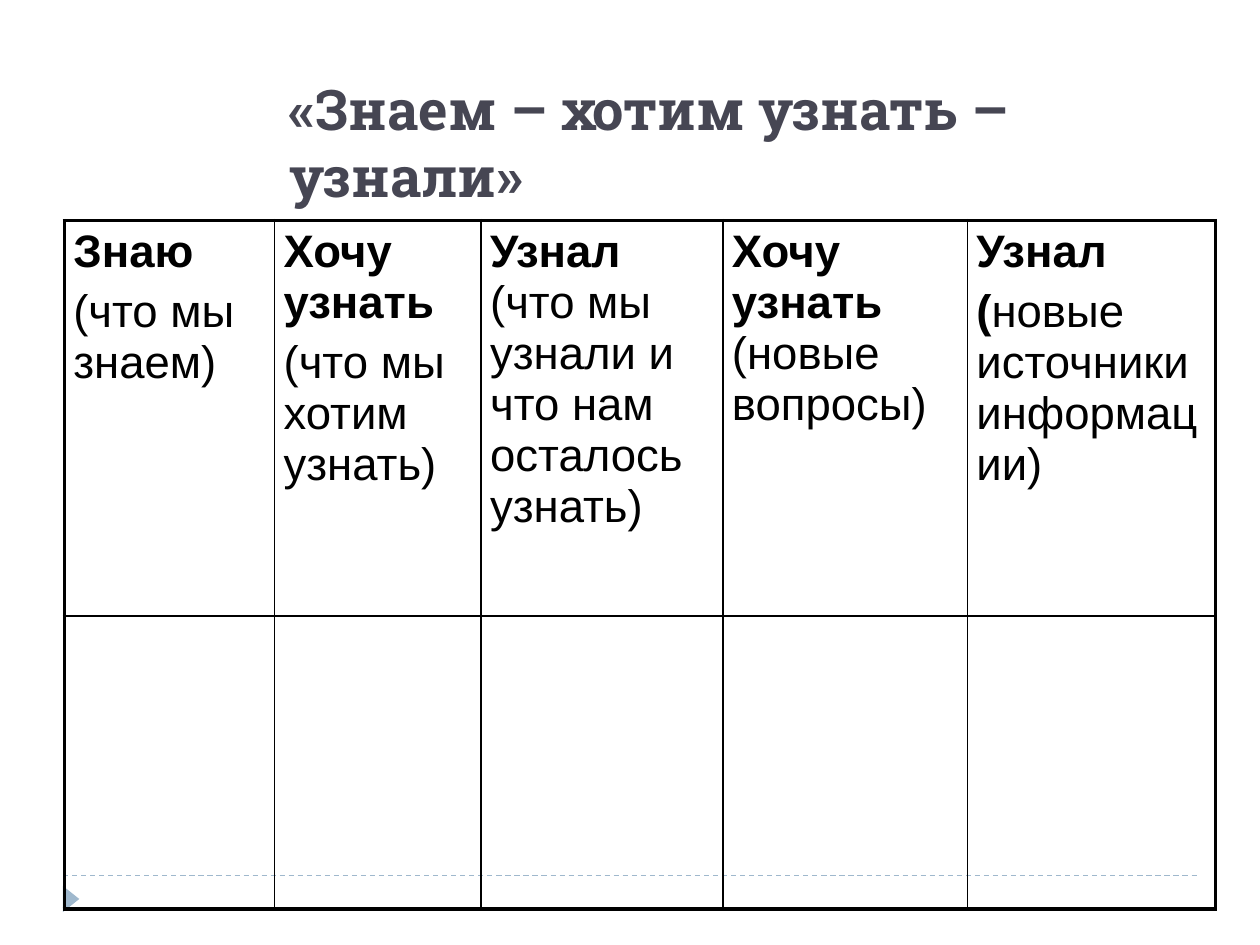
from lxml import etree
from pptx import Presentation
from pptx.dml.color import RGBColor
from pptx.enum.dml import MSO_LINE
from pptx.enum.shapes import MSO_CONNECTOR, MSO_SHAPE
from pptx.enum.text import MSO_ANCHOR
from pptx.oxml.ns import qn
from pptx.util import Pt

STRAIGHT = MSO_CONNECTOR.STRAIGHT
TRIANGLE = MSO_SHAPE.ISOSCELES_TRIANGLE
DASH = MSO_LINE.DASH
MIDDLE = MSO_ANCHOR.MIDDLE

BLACK = RGBColor(0x00, 0x00, 0x00)
SLATE = RGBColor(0x46, 0x46, 0x53)
PALE_BLUE = RGBColor(0x9F, 0xB8, 0xCD)

OUTER, INNER = 2.25, 1

# One entry per column: paragraphs, each a list of (text, bold) runs.
HEADINGS = [
    [[("Знаю", True)], [("(что мы знаем)", False)]],
    [[("Хочу узнать", True)], [("(что мы хотим узнать)", False)]],
    [[("Узнал ", True), ("(что мы узнали и что нам осталось узнать)", False)]],
    [[("Хочу узнать", True), (" (новые вопросы)", False)]],
    [[("Узнал", True)], [("(", True), ("новые источники информации)", False)]],
]
COLUMN_WIDTHS = [120.2, 118, 138.2, 139.7, 141.8]
ROW_HEIGHTS = [226, 167.5]


def write(frame, paragraphs, *, font, size, color, space_before=0):
    """Fill a text frame with paragraphs, each a list of (text, bold) runs."""
    frame.word_wrap = True
    for index, runs in enumerate(paragraphs):
        paragraph = frame.paragraphs[0] if index == 0 else frame.add_paragraph()
        paragraph.space_before = Pt(space_before)
        for text, bold in runs:
            run = paragraph.add_run()
            run.text = text
            run.font.name = font
            run.font.size = Pt(size)
            run.font.bold = bold
            run.font.color.rgb = color


def set_borders(cell, widths):
    """Draw the cell's edges; widths maps L, R, T, B, in that order, to points."""
    properties = cell._tc.get_or_add_tcPr()
    for side, width in widths.items():
        edge = etree.SubElement(properties, qn(f"a:ln{side}"), w=str(Pt(width)))
        fill = etree.SubElement(edge, qn("a:solidFill"))
        etree.SubElement(fill, qn("a:srgbClr"), val=str(BLACK))


presentation = Presentation()
presentation.slide_width, presentation.slide_height = Pt(720), Pt(540)
slide = presentation.slides.add_slide(presentation.slide_layouts[6])
shapes = slide.shapes

# Footer rule and marker
footer_rule = shapes.add_connector(STRAIGHT, Pt(36), Pt(500.4), Pt(684), Pt(500.4))
footer_rule.line.color.rgb = PALE_BLUE
footer_rule.line.width = Pt(0.75)
footer_rule.line.dash_style = DASH
etree.SubElement(footer_rule._element.spPr, qn("a:effectLst"))

marker = shapes.add_shape(TRIANGLE, Pt(33.1), Pt(509), Pt(15), Pt(9.4))
marker.rotation = 90
marker.shadow.inherit = False
marker.fill.solid()
marker.fill.fore_color.rgb = PALE_BLUE
marker.line.fill.background()

# Title
title = shapes.add_textbox(Pt(158.4), Pt(28.8), Pt(561.6), Pt(104.4)).text_frame
title.vertical_anchor = MIDDLE
write(title, [[("«Знаем – хотим узнать – узнали»", True)]],
      font="Roboto Slab", size=32, color=SLATE)

# Table: headings above an empty row to fill in
last_row, last_column = len(ROW_HEIGHTS) - 1, len(COLUMN_WIDTHS) - 1
table = shapes.add_table(len(ROW_HEIGHTS), len(COLUMN_WIDTHS), Pt(36.7), Pt(126),
                         Pt(sum(COLUMN_WIDTHS)), Pt(sum(ROW_HEIGHTS))).table
table.first_row = table.horz_banding = False
for column, width in zip(table.columns, COLUMN_WIDTHS):
    column.width = Pt(width)
for r, height in enumerate(ROW_HEIGHTS):
    table.rows[r].height = Pt(height)
    for c in range(len(COLUMN_WIDTHS)):
        cell = table.cell(r, c)
        cell.margin_left = cell.margin_right = Pt(5.2)
        cell.margin_top = cell.margin_bottom = Pt(3.6)
        set_borders(cell, {
            "L": OUTER if c == 0 else INNER,
            "R": OUTER if c == last_column else INNER,
            "T": OUTER if r == 0 else INNER,
            "B": OUTER if r == last_row else INNER,
        })
        cell.fill.background()
        if r == 0:
            write(cell.text_frame, HEADINGS[c],
                  font="Arial", size=26, color=BLACK, space_before=5.2)

presentation.save("out.pptx")
